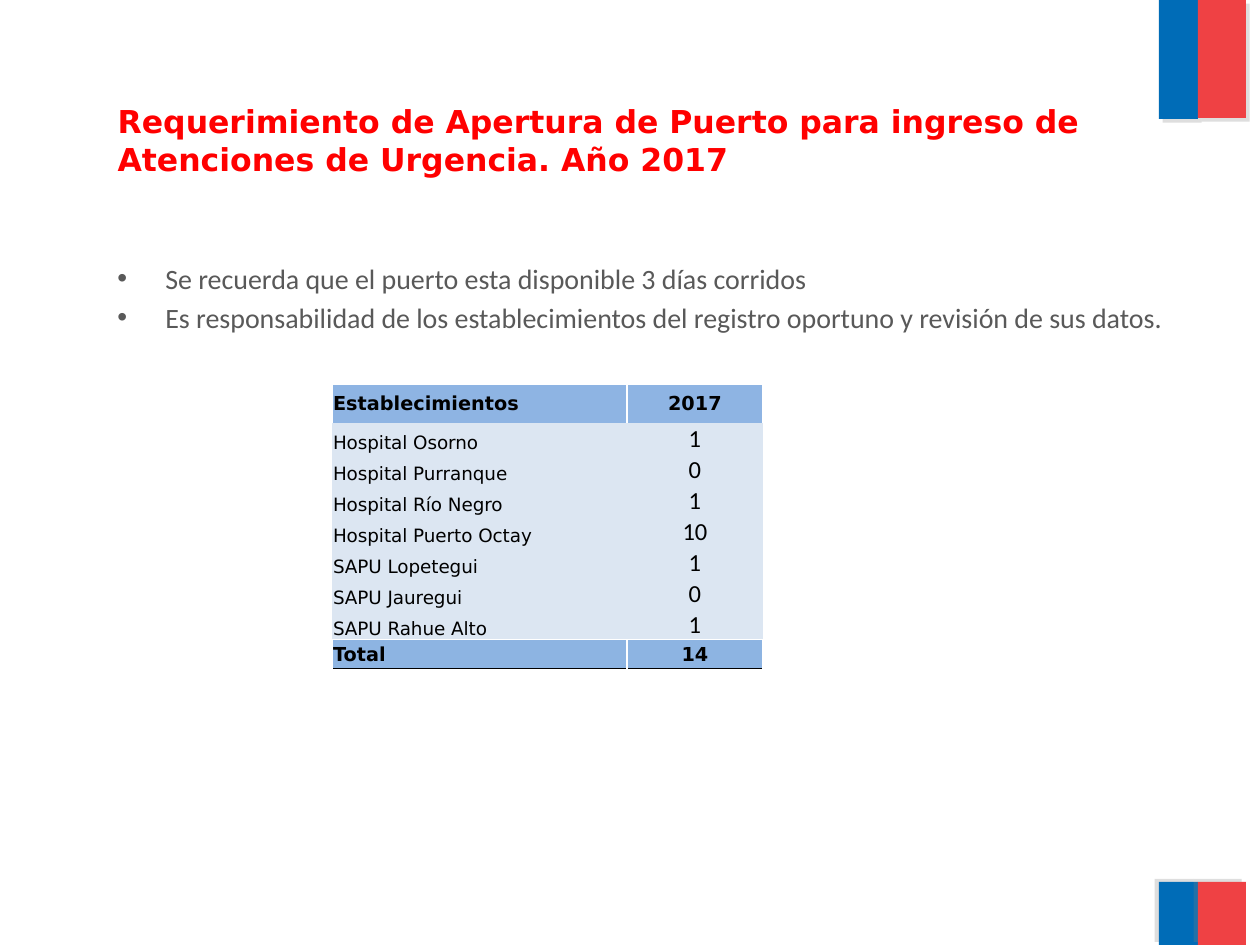
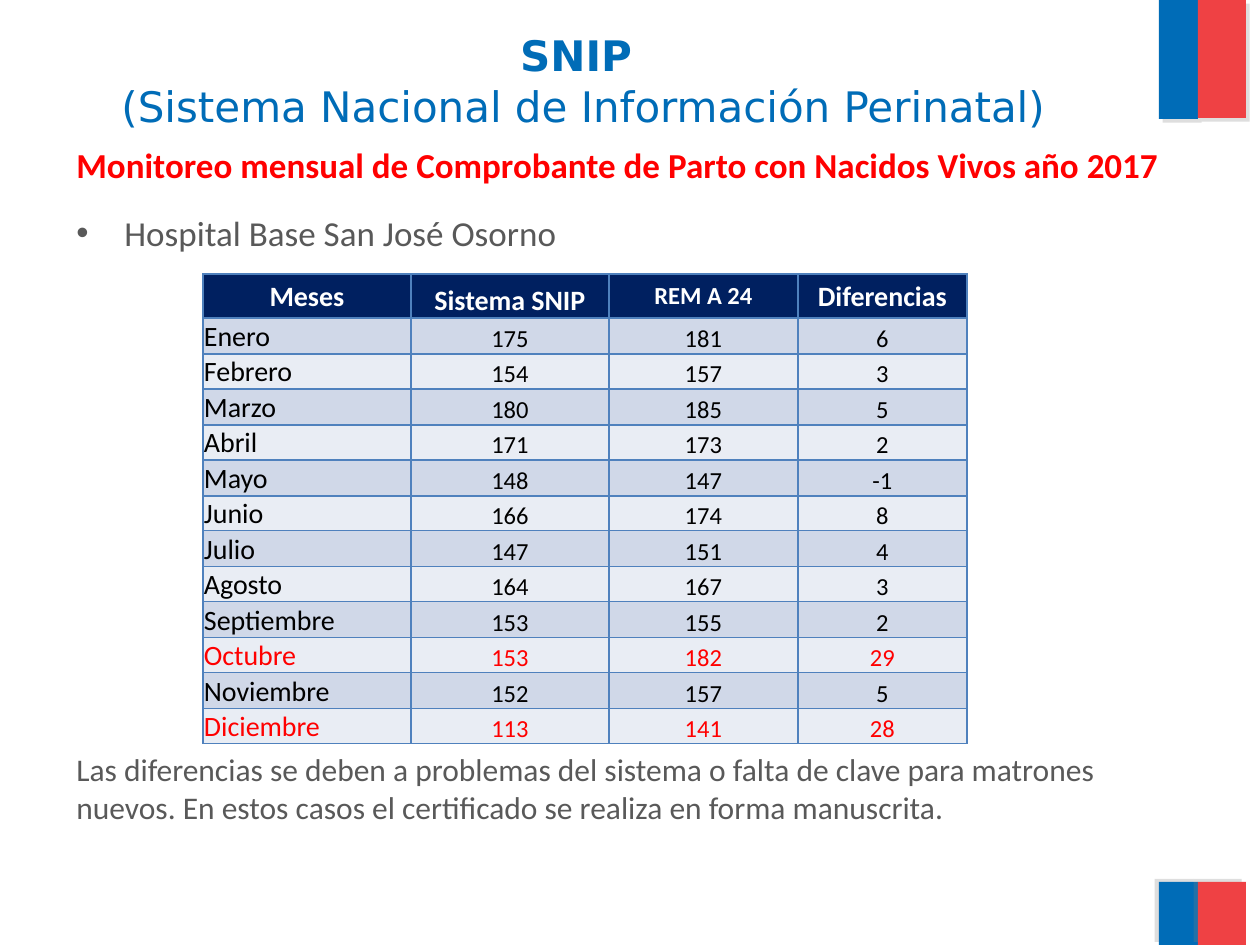
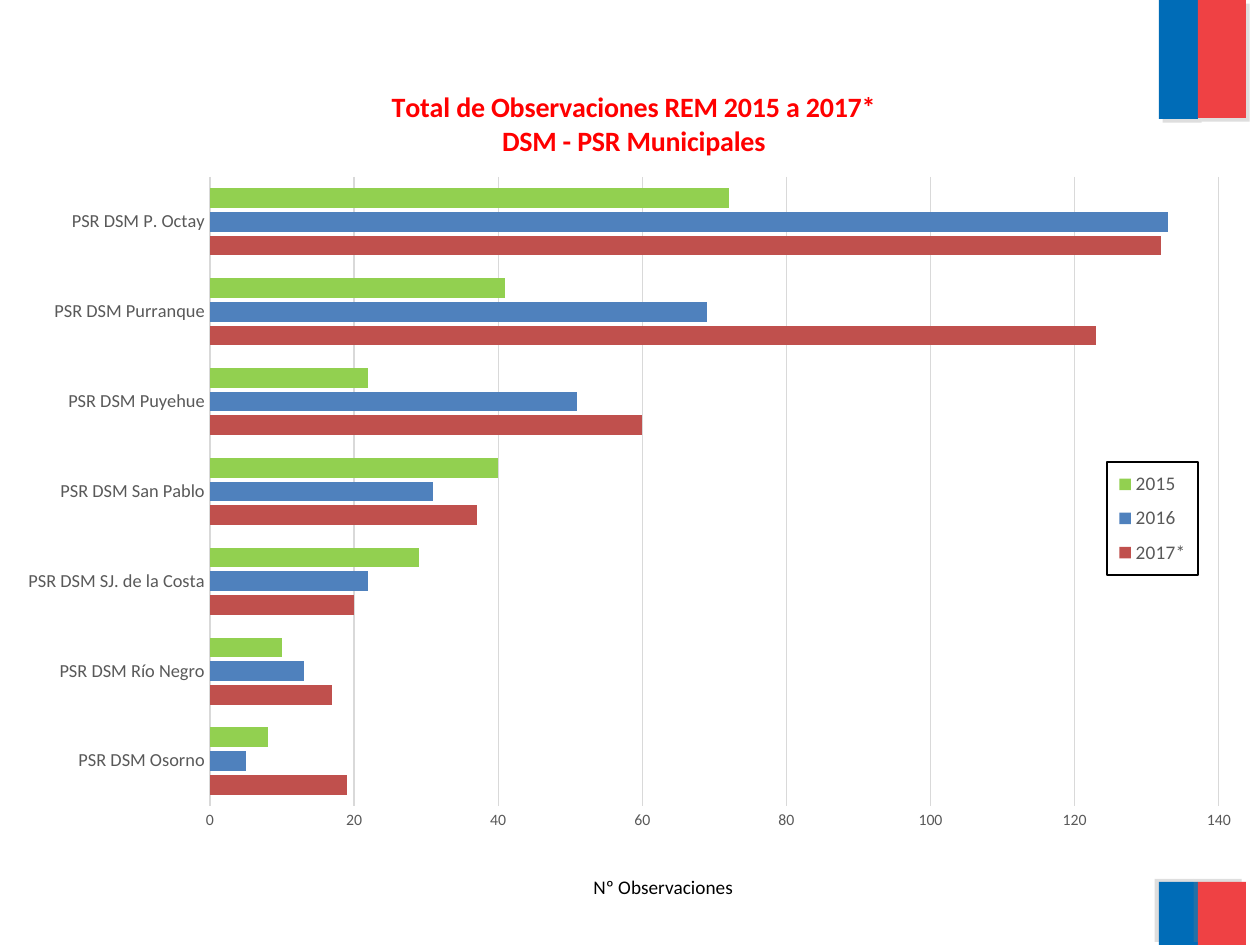
from collections import namedtuple
from dataclasses import dataclass, replace

from lxml.etree import SubElement
from pptx import Presentation
from pptx.chart.data import CategoryChartData
from pptx.dml.color import RGBColor
from pptx.enum.chart import XL_CHART_TYPE as ChartType, XL_LEGEND_POSITION as LegendSpot, XL_TICK_MARK as Tick
from pptx.enum.shapes import MSO_SHAPE as Preset
from pptx.enum.text import MSO_ANCHOR as Anchor, PP_ALIGN as Align
from pptx.oxml import parse_xml
from pptx.oxml.ns import nsdecls, qn
from pptx.util import Pt

PX = 914400 // 126
NO_GRID = "{2D5ABB26-0587-4C30-8999-92F81FD0307C}"


@dataclass(frozen=True)
class Theme:
    sans: str = "DejaVu Sans"
    text: str = "Calibri"
    blue: str = "006CB7"
    coral: str = "EF4144"
    red: str = "FF0000"
    gray: str = "595959"
    black: str = "000000"
    white: str = "FFFFFF"
    shadow: str = "808080"
    rule: str = "D9D9D9"
    sky: str = "8EB4E3"
    total: str = "8DB4E2"
    pale: str = "DCE6F2"
    navy: str = "002060"
    grid: str = "4F81BD"
    band_dark: str = "D0D8E8"
    band_light: str = "E9EDF4"
    brick: str = "C0504D"
    lime: str = "92D050"
    huge: float = 24
    large: float = 20
    heading: float = 18
    body: float = 16
    figure: float = 14
    label: float = 11
    small: float = 10.5
    base: float = 10
    tick: float = 9


@dataclass(frozen=True)
class Look:
    font: str
    size: float
    color: str
    bold: bool = False
    align: Align = Align.LEFT
    anchor: Anchor = Anchor.BOTTOM


THEME = Theme()
Row = namedtuple("Row", "texts looks fill borders")


def add_span(para, text, look):
    para.alignment = look.align
    span = para.add_run()
    span.text = text
    span.font.name = look.font
    span.font.size = Pt(look.size)
    span.font.bold = look.bold
    span.font.color.rgb = RGBColor.from_string(look.color)


def add_grid(page, left, top, widths, heights, rows):
    frame = page.shapes.add_table(len(rows), len(widths), left * PX, top * PX,
                                  sum(widths) * PX, sum(heights) * PX)
    next(frame.element.iter(qn("a:tableStyleId"))).text = NO_GRID
    for column, width in zip(frame.table.columns, widths):
        column.width = width * PX
    for line, height, row in zip(frame.table.rows, heights, rows):
        line.height = height * PX
        for cell, text, look in zip(line.cells, row.texts, row.looks):
            cell.margin_left = cell.margin_right = cell.margin_top = PX
            cell.margin_bottom = 0
            cell.vertical_anchor = look.anchor
            props = cell._tc.get_or_add_tcPr()
            for side, (color, points) in row.borders.items():
                edge = SubElement(props, qn(f"a:ln{side}"), w=str(Pt(points)))
                SubElement(SubElement(edge, qn("a:solidFill")), qn("a:srgbClr"), val=color)
            cell.fill.solid()
            cell.fill.fore_color.rgb = RGBColor.from_string(row.fill)
            add_span(cell.text_frame.paragraphs[0], text, look)


deck = Presentation()
deck.slide_width = 1260 * PX
deck.slide_height = 945 * PX
title_only, blank = deck.slide_layouts[5], deck.slide_layouts[6]
port_page, birth_page, chart_page = [deck.slides.add_slide(layout) for layout in (title_only, title_only, blank)]

bands = [
    (1159, -1, 39, 120, THEME.blue, 45),
    (1198, 0, 48, 118, THEME.coral, 45),
    (1159, 882, 39, 63, THEME.blue, 215),
    (1198, 882, 48, 63, THEME.coral, 215),
]
master_tree = deck.slide_master.element.cSld.spTree
for number, (left, top, width, height, color, angle) in enumerate(bands, 20):
    band = port_page.shapes.add_shape(Preset.RECTANGLE, left * PX, top * PX, width * PX, height * PX)
    band.name = f"Band {number}"
    band.fill.solid()
    band.fill.fore_color.rgb = RGBColor.from_string(color)
    band.line.fill.background()
    band.element.spPr.append(parse_xml(
        f'<a:effectLst {nsdecls("a")}><a:outerShdw blurRad="0" dist="{Pt(3)}" dir="{angle * 60000}" '
        f'algn="ctr" rotWithShape="0"><a:srgbClr val="{THEME.shadow}"><a:alpha val="25000"/>'
        '</a:srgbClr></a:outerShdw></a:effectLst>'))
    band.element.nvSpPr.cNvPr.set("id", str(number))
    master_tree.append(band.element)

port_title = Look(THEME.sans, THEME.heading, THEME.red, True)
birth_title = Look(THEME.sans, THEME.huge, THEME.blue, True, Align.CENTER)
titles = [
    (port_page, (105, 96, 1042, 83), 6, [
        ("Requerimiento de Apertura de Puerto para ingreso de ", port_title),
        ("Atenciones de Urgencia. Año 2017", port_title)]),
    (birth_page, (21, 21, 1125, 158), 9, [
        ("SNIP ", birth_title),
        ("(Sistema Nacional de Información Perinatal)", replace(birth_title, bold=False))]),
]
for page, place, margin, lines in titles:
    title = page.shapes.title
    title.left, title.top, title.width, title.height = [n * PX for n in place]
    frame = title.text_frame
    frame.word_wrap = True
    frame.vertical_anchor = Anchor.TOP
    frame.margin_top = margin * PX
    para = frame.paragraphs[0]
    for index, (text, look) in enumerate(lines):
        if index:
            para.add_line_break()
        add_span(para, text, look)

body = Look(THEME.text, THEME.body, THEME.gray)
texts = [
    (port_page, (105, 255, 1126, 136), True, body, [
        "Se recuerda que el puerto esta disponible 3 días corridos",
        "Es responsabilidad de los establecimientos del registro oportuno y revisión de sus datos."]),
    (birth_page, (64, 137, 1126, 69), False, Look(THEME.text, THEME.large, THEME.red, True), [
        "Monitoreo mensual de Comprobante de Parto con Nacidos Vivos año 2017"]),
    (birth_page, (64, 205, 1084, 60), True, replace(body, size=THEME.large), [
        "Hospital Base San José Osorno"]),
    (birth_page, (64, 744, 1084, 90), False, replace(body, size=THEME.heading), [
        "Las diferencias se deben a problemas del sistema o falta de clave para matrones nuevos. "
        "En estos casos el certificado se realiza en forma manuscrita."]),
]
for page, place, bulleted, look, lines in texts:
    frame = page.shapes.add_textbox(*[n * PX for n in place]).text_frame
    frame.word_wrap = True
    for index, text in enumerate(lines):
        para = frame.add_paragraph() if index else frame.paragraphs[0]
        if bulleted:
            props = para._p.get_or_add_pPr()
            props.set("marL", str(48 * PX))
            props.set("indent", str(-48 * PX))
            SubElement(props, qn("a:buFont"), typeface="Arial")
            SubElement(props, qn("a:buChar"), char="•")
        if index:
            para.space_before = Pt(look.size * 0.2)
        add_span(para, text, look)

white_line, black_line = (THEME.white, 1), (THEME.black, 0.5)
head = Look(THEME.sans, THEME.label, THEME.black, True, anchor=Anchor.MIDDLE)
heads = (head, replace(head, align=Align.CENTER))
site = Look(THEME.sans, THEME.small, THEME.black)
count = Look(THEME.text, THEME.figure, THEME.black, align=Align.CENTER)
sites = [
    ("Hospital Osorno", 1),
    ("Hospital Purranque", 0),
    ("Hospital Río Negro", 1),
    ("Hospital Puerto Octay", 10),
    ("SAPU Lopetegui", 1),
    ("SAPU Jauregui", 0),
    ("SAPU Rahue Alto", 1),
]
port_rows = [
    Row(("Establecimientos", "2017"), heads, THEME.sky, dict.fromkeys("LRT", white_line)),
    *[Row((name, str(value)), (site, count), THEME.pale, {}) for name, value in sites],
    Row(("Total", str(sum(value for name, value in sites))), heads, THEME.total,
        {**dict.fromkeys("LRT", white_line), "B": black_line}),
]
add_grid(port_page, 332, 384, [295, 136], [39] + [31] * len(sites) + [29], port_rows)

all_sides = dict.fromkeys("LRTB", (THEME.grid, 1))
head = Look(THEME.text, THEME.body, THEME.white, True, Align.CENTER, Anchor.MIDDLE)
heads = (head, replace(head, anchor=Anchor.BOTTOM), replace(head, size=THEME.figure), head)
birth_rows = [Row(("Meses", "Sistema SNIP", "REM A 24", "Diferencias"), heads, THEME.navy, all_sides)]
months = [
    ("Enero", 175, 181),
    ("Febrero", 154, 157),
    ("Marzo", 180, 185),
    ("Abril", 171, 173),
    ("Mayo", 148, 147),
    ("Junio", 166, 174),
    ("Julio", 147, 151),
    ("Agosto", 164, 167),
    ("Septiembre", 153, 155),
    ("Octubre", 153, 182),
    ("Noviembre", 152, 157),
    ("Diciembre", 113, 141),
]
for index, (month, snip, rem) in enumerate(months):
    gap = rem - snip
    color = THEME.red if gap > 20 else THEME.black
    name_look = Look(THEME.text, THEME.body, color)
    looks = (name_look, *[replace(count, color=color)] * 3)
    fill = THEME.band_light if index % 2 else THEME.band_dark
    birth_rows.append(Row((month, str(snip), str(rem), str(gap)), looks, fill, all_sides))
add_grid(birth_page, 203, 274, [208, 198, 189, 169], [44] + [36, 35] * 6, birth_rows)

axis_label = chart_page.shapes.add_textbox(581, 869, 166, 37)
axis_label.left, axis_label.top, axis_label.width, axis_label.height = [n * PX for n in (581, 869, 166, 37)]
axis_label.text_frame.word_wrap = False
add_span(axis_label.text_frame.paragraphs[0], "Nº Observaciones", Look(THEME.text, THEME.label, THEME.black))

series = [
    ("2017*", (19, 17, 20, 37, 60, 123, 132), THEME.brick),
    ("2016", (5, 13, 22, 31, 51, 69, 133), THEME.grid),
    ("2015", (8, 10, 29, 40, 22, 41, 72), THEME.lime),
]
data = CategoryChartData()
data.categories = [f"PSR DSM {town}" for town in (
    "Osorno", "Río Negro", "SJ. de la Costa", "San Pablo", "Puyehue", "Purranque", "P. Octay")]
for name, values, color in series:
    data.add_series(name, values)
chart_left, chart_top, chart_width, chart_height = 4, 55, 1252, 833
chart = chart_page.shapes.add_chart(ChartType.BAR_CLUSTERED, chart_left * PX, chart_top * PX,
                                    chart_width * PX, chart_height * PX, data).chart
chart.font.name = THEME.text
chart.font.size = Pt(THEME.base)
chart.font.color.rgb = RGBColor.from_string(THEME.black)

plot = chart.plots[0]
plot.gap_width = 115
plot.overlap = -20
plot.vary_by_categories = False
for bars, (name, values, color) in zip(plot.series, series):
    bars.format.fill.solid()
    bars.format.fill.fore_color.rgb = RGBColor.from_string(color)

chart.has_title = True
title_frame = chart.chart_title.text_frame
title_look = Look(THEME.text, THEME.body, THEME.red, True, Align.CENTER)
add_span(title_frame.paragraphs[0], "Total de Observaciones REM 2015 a 2017*", title_look)
add_span(title_frame.add_paragraph(), "DSM - PSR Municipales", title_look)

chart.has_legend = True
legend = chart.legend
legend.position = LegendSpot.RIGHT
legend.include_in_layout = False

towns, observations = chart.category_axis, chart.value_axis
for part, size in ((towns.tick_labels, THEME.small), (observations.tick_labels, THEME.tick), (legend, THEME.label)):
    part.font.name = THEME.text
    part.font.size = Pt(size)
    part.font.color.rgb = RGBColor.from_string(THEME.gray)
for axis in (towns, observations):
    axis.major_tick_mark = axis.minor_tick_mark = Tick.NONE
towns.has_major_gridlines = False
observations.has_major_gridlines = True
observations.minimum_scale, observations.maximum_scale, observations.major_unit = 0, 140, 20
observations.format.line.fill.background()
for line, points in ((towns.format.line, 1), (observations.major_gridlines.format.line, 0.75)):
    line.color.rgb = RGBColor.from_string(THEME.rule)
    line.width = Pt(points)

legend_xml = legend._element
legend_xml.find(qn("c:txPr")).addprevious(parse_xml(
    f'<c:spPr {nsdecls("c", "a")}><a:ln w="{Pt(0.75)}"><a:solidFill><a:srgbClr val="{THEME.black}"/>'
    '</a:solidFill></a:ln></c:spPr>'))
placements = [
    (chart._chartSpace.chart.plotArea, 0, (210, 177, 1009, 629)),
    (legend_xml, 1, (1107, 462, 91, 113)),
    (chart.chart_title._element, 1, (388, 85)),
]
for element, position, place in placements:
    for old in element.findall(qn("c:layout")):
        element.remove(old)
    layout = parse_xml(f'<c:layout {nsdecls("c")}><c:manualLayout/></c:layout>')
    manual = layout[0]
    if position == 0:
        SubElement(manual, qn("c:layoutTarget"), val="inner")
    for mode in ("xMode", "yMode"):
        SubElement(manual, qn(f"c:{mode}"), val="edge")
    x, y, *extent = place
    shares = [(x - chart_left) / chart_width, (y - chart_top) / chart_height]
    shares += [n / whole for n, whole in zip(extent, (chart_width, chart_height))]
    for key, share in zip("xywh", shares):
        SubElement(manual, qn(f"c:{key}"), val=f"{share:.4f}")
    element.insert(position, layout)

deck.save("out.pptx")
